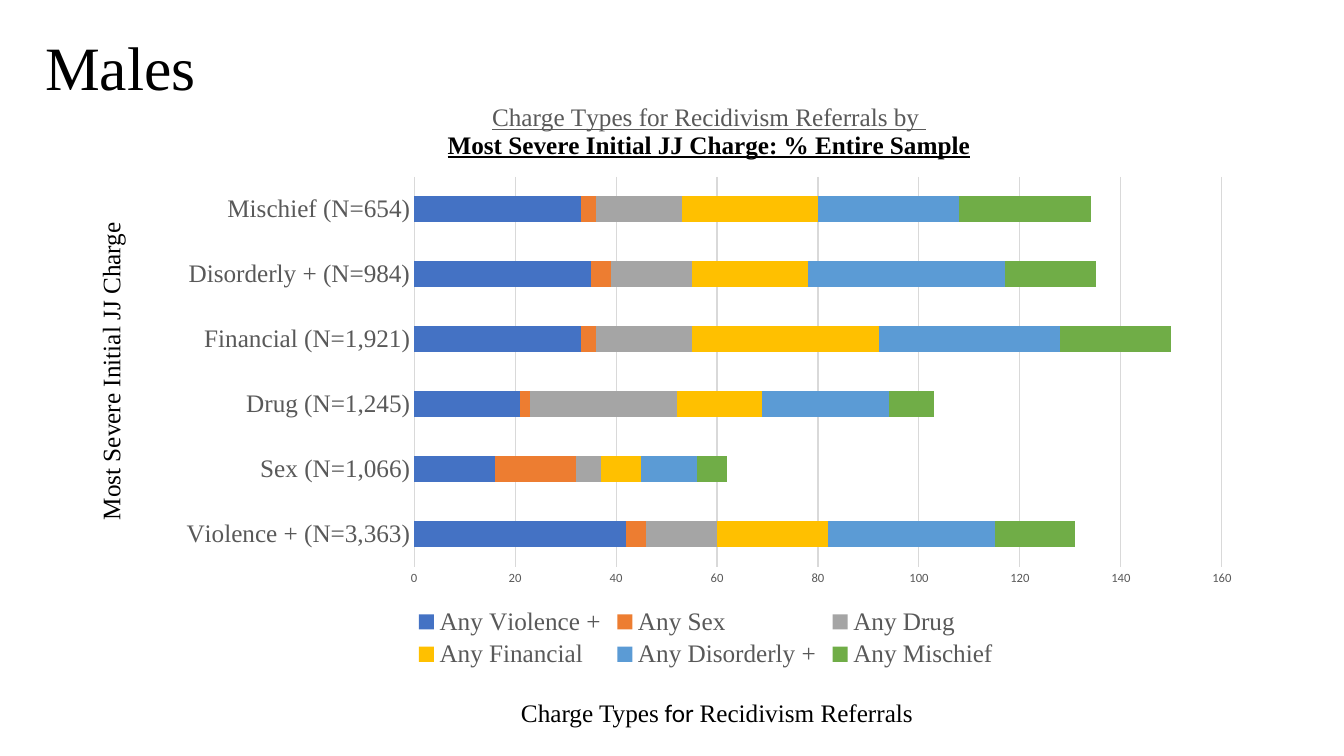
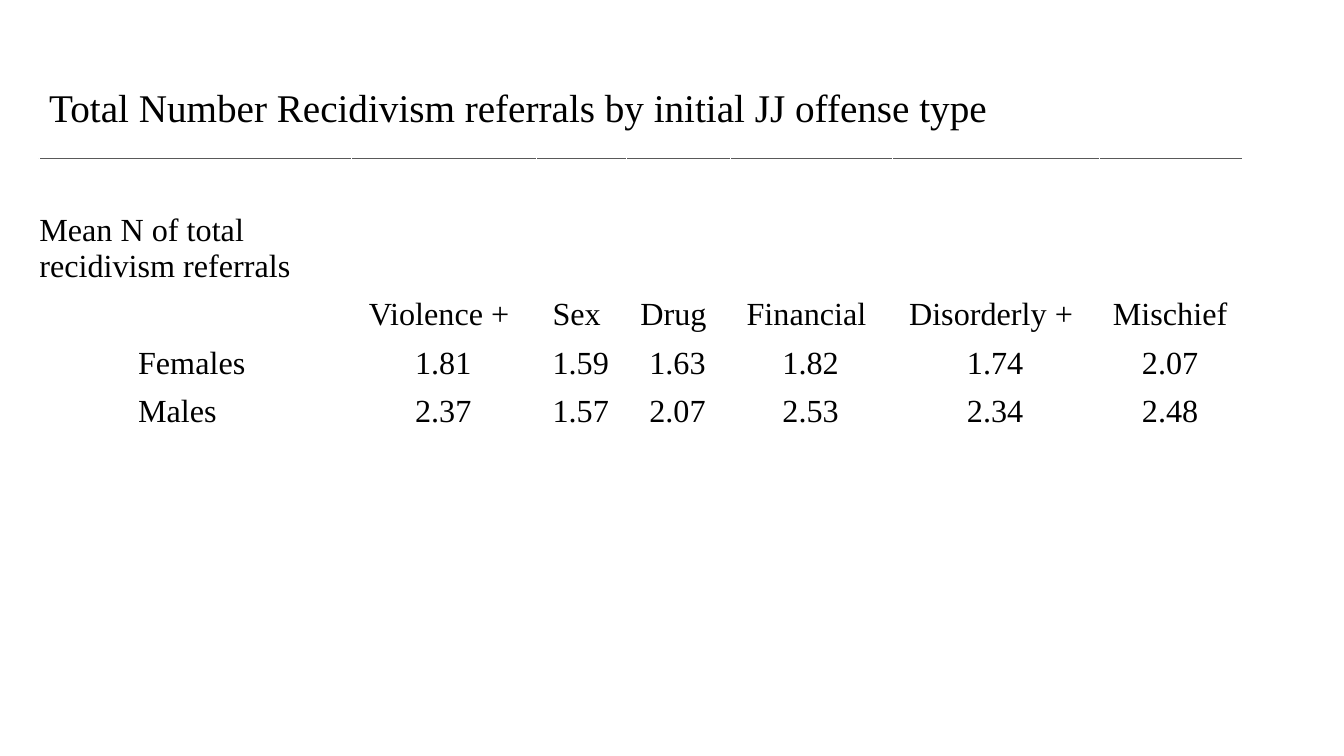
from lxml.etree import SubElement
from pptx import Presentation
from pptx.chart.data import CategoryChartData
from pptx.dml.color import RGBColor
from pptx.enum.chart import XL_CHART_TYPE as Chart, XL_LEGEND_POSITION as Legend
from pptx.enum.chart import XL_TICK_MARK as Tick
from pptx.enum.text import MSO_ANCHOR as Anchor, MSO_AUTO_SIZE as AutoSize, PP_ALIGN as Align
from pptx.oxml import parse_xml
from pptx.oxml.ns import qn, nsdecls
from pptx.util import Cm, Pt

SERIF, SANS = "Times New Roman", "Calibri"
BLACK, GREY, GRID = "000000", "595959", "D9D9D9"

MALES_TITLE = "Males"
CHART_TITLE = [
    ("Charge Types for Recidivism Referrals by ", GREY, False),
    ("Most Severe Initial JJ Charge: % Entire Sample", BLACK, True),
]
CHARGES = ["Violence + (N=3,363)", "Sex (N=1,066)", "Drug (N=1,245)",
           "Financial (N=1,921)", "Disorderly + (N=984)", "Mischief (N=654)"]
REFERRALS = [
    ("Any Violence +", "4472C4", (42, 16, 21, 33, 35, 33)),
    ("Any Sex ", "ED7D31", (4, 16, 2, 3, 4, 3)),
    ("Any Drug ", "A5A5A5", (14, 5, 29, 19, 16, 17)),
    ("Any Financial ", "FFC000", (22, 8, 17, 37, 23, 27)),
    ("Any Disorderly +", "5B9BD5", (33, 11, 25, 36, 39, 28)),
    ("Any Mischief ", "70AD47", (16, 6, 9, 22, 18, 26)),
]
CHARGE_LABEL = [("Most Severe Initial JJ Charge", SERIF)]
REFERRAL_LABEL = [("Charge Types", SERIF), (" for ", SANS), ("Recidivism Referrals", SERIF)]
PLOT_AREA = {"x": 0.23, "y": 0.16, "w": 0.74, "h": 0.66}

MEANS_TITLE = "Total Number Recidivism referrals by initial JJ offense type"
MEANS = [
    ["Mean N of total recidivism referrals"] + [""] * 7,
    ["", "", "Violence + ", "Sex ", "Drug ", "Financial ", "Disorderly + ", "Mischief"],
    ["", "Females", "1.81", "1.59", "1.63", "1.82", "1.74", "2.07"],
    ["", "Males", "2.37", "1.57", "2.07", "2.53", "2.34", "2.48"],
]
COL_WIDTHS = [2.49, 5.38, 4.67, 2.26, 2.62, 4.09, 5.21, 3.61]
ROW_HEIGHTS = [3.18, 1.22, 1.22, 1.22]


def rgb(color):
    """Turn a hex string into a colour."""
    return RGBColor.from_string(color)


def style(font, size, color=BLACK, name=SERIF):
    """Set size, colour and typeface of a font."""
    font.size, font.name = Pt(size), name
    font.color.rgb = rgb(color)


def add_text(s, box, runs, size):
    """Add a text box with one paragraph of (text, font) runs."""
    sp = s.shapes.add_textbox(*map(Cm, box))
    tf = sp.text_frame
    tf.word_wrap = True
    tf.auto_size = AutoSize.SHAPE_TO_FIT_TEXT
    for text, name in runs:
        r = tf.paragraphs[0].add_run()
        r.text = text
        style(r.font, size, name=name)
    return sp


def add_title(s, box, text, size):
    """Add a slide title."""
    return add_text(s, box, [(text, SERIF)], size)


def set_plot_area(chart):
    """Fix the inner plot area as shares of the chart."""
    plot_area = chart._chartSpace.chart.plotArea
    for old in plot_area.findall(qn("c:layout")):
        plot_area.remove(old)
    layout = parse_xml(f"<c:layout {nsdecls('c')}><c:manualLayout/></c:layout>")
    settings = [("layoutTarget", "inner"), ("xMode", "edge"), ("yMode", "edge")]
    for tag, value in settings + list(PLOT_AREA.items()):
        SubElement(layout[0], qn(f"c:{tag}")).set("val", str(value))
    plot_area.insert(0, layout)


def add_referral_chart(s):
    """Add the stacked bars of referral types by initial charge."""
    data = CategoryChartData()
    data.categories = CHARGES
    for name, _, values in REFERRALS:
        data.add_series(name, values)
    box = map(Cm, (4.11, 2.08, 27.51, 14.88))
    chart = s.shapes.add_chart(Chart.BAR_STACKED, *box, data).chart
    style(chart.font, 10, name=SANS)

    chart.has_title = True
    tf = chart.chart_title.text_frame
    for i, (text, color, bold) in enumerate(CHART_TITLE):
        p = tf.add_paragraph() if i else tf.paragraphs[0]
        r = p.add_run()
        r.text = text
        style(r.font, 18, color)
        r.font.bold, r.font.underline = bold, True
    chart.chart_title.include_in_layout = False

    plot = chart.plots[0]
    plot.gap_width, plot.overlap, plot.vary_by_categories = 150, 100, False
    for series, (_, color, _) in zip(plot.series, REFERRALS):
        series.format.fill.solid()
        series.format.fill.fore_color.rgb = rgb(color)

    charges, percent = chart.category_axis, chart.value_axis
    for axis, size, name in ((charges, 18, SERIF), (percent, 9, SANS)):
        axis.major_tick_mark = axis.minor_tick_mark = Tick.NONE
        style(axis.tick_labels.font, size, GREY, name)
    percent.minimum_scale, percent.maximum_scale, percent.major_unit = 0, 160, 20
    percent.format.line.fill.background()
    for line in (charges.format.line, percent.major_gridlines.format.line):
        line.color.rgb, line.width = rgb(GRID), Pt(0.75)

    chart.has_legend = True
    chart.legend.position = Legend.BOTTOM
    chart.legend.include_in_layout = False
    style(chart.legend.font, 18, GREY)
    set_plot_area(chart)


def add_top_border(cell):
    """Draw a thin rule along the top of a cell."""
    border = parse_xml(
        f'<a:lnT {nsdecls("a")} w="{Pt(0.75)}"><a:solidFill>'
        f'<a:srgbClr val="{GREY}"/></a:solidFill></a:lnT>')
    cell._tc.get_or_add_tcPr().insert(0, border)


def add_means_table(s):
    """Add the table of mean referrals by sex and offense type."""
    box = map(Cm, (0.99, 3.99, sum(COL_WIDTHS), sum(ROW_HEIGHTS)))
    table = s.shapes.add_table(len(MEANS), len(COL_WIDTHS), *box).table
    table.first_row = table.horz_banding = False
    for column, width in zip(table.columns, COL_WIDTHS):
        column.width = Cm(width)
    for i, (row, height) in enumerate(zip(MEANS, ROW_HEIGHTS)):
        table.rows[i].height = Cm(height)
        for j, text in enumerate(row):
            cell = table.cell(i, j)
            cell.fill.background()
            cell.vertical_anchor = Anchor.BOTTOM
            cell.margin_left = cell.margin_bottom = 0
            cell.margin_top = cell.margin_right = Cm(0.05)
            if i == 0:
                add_top_border(cell)
            if text:
                p = cell.text_frame.paragraphs[0]
                p.alignment = Align.LEFT if j < 2 else Align.CENTER
                r = p.add_run()
                r.text = text
                style(r.font, 23)
    table.cell(0, 0).merge(table.cell(0, 1))


def main():
    """Build both slides and save them."""
    prs = Presentation()
    prs.slide_width, prs.slide_height = Cm(33.87), Cm(19.05)
    males, means = (prs.slides.add_slide(prs.slide_layouts[6]) for _ in range(2))

    title = add_title(males, (0.89, 0.76, 28.88, 2.06), MALES_TITLE, 44)
    title.text_frame.auto_size = AutoSize.NONE
    title.text_frame.vertical_anchor = Anchor.MIDDLE
    title.text_frame.paragraphs[0].line_spacing = 0.9
    add_referral_chart(males)
    add_text(males, (-1.75, 8.31, 9.07, 1.02), CHARGE_LABEL, 18).rotation = 270
    add_text(males, (12.88, 17.45, 12.98, 1.02), REFERRAL_LABEL, 18)

    add_means_table(means)
    add_title(means, (0.99, 1.98, 27.76, 1.45), MEANS_TITLE, 28)
    prs.save("out.pptx")


if __name__ == "__main__":
    main()
